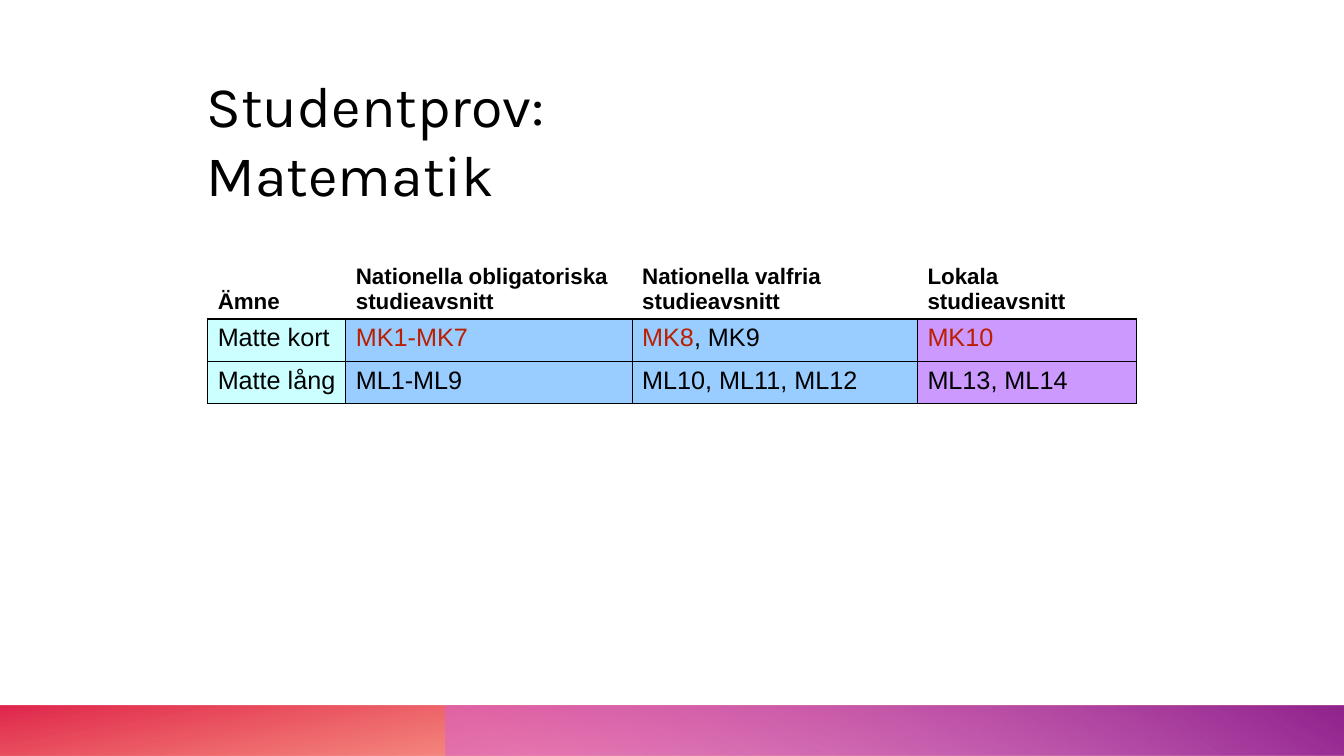
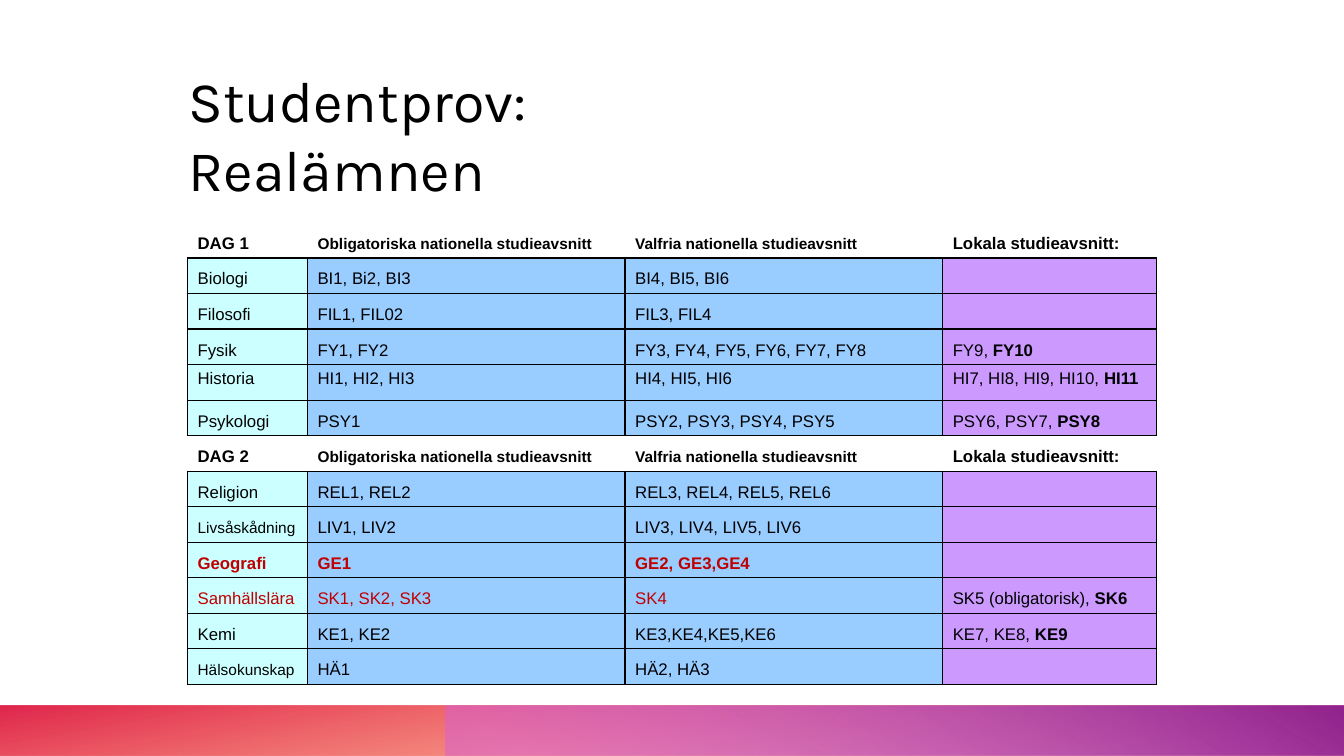
from dataclasses import dataclass

from lxml import etree
from pptx import Presentation
from pptx.dml.color import RGBColor
from pptx.enum.shapes import MSO_SHAPE
from pptx.enum.text import MSO_ANCHOR, MSO_AUTO_SIZE, PP_ALIGN
from pptx.oxml.ns import qn
from pptx.util import Inches, Pt

RECTANGLE = MSO_SHAPE.RECTANGLE
TOP, MIDDLE, BOTTOM = MSO_ANCHOR.TOP, MSO_ANCHOR.MIDDLE, MSO_ANCHOR.BOTTOM
LEFT = PP_ALIGN.LEFT
NO_AUTOFIT = MSO_AUTO_SIZE.NONE
TITLE_ONLY = 5
PLAIN_TABLE_STYLE = "{2D5ABB26-0587-4C30-8999-92F81FD0307C}"


@dataclass(frozen=True)
class Theme:
    title_font: str = "Karla"
    table_font: str = "Arial"
    title_size: int = 41
    math_header_size: int = 16
    math_size: int = 18
    subjects_size: int = 12
    small_size: int = 11
    border_width: int = 1
    text: str = "000000"
    math_accent: str = "B91F00"
    subjects_accent: str = "C00000"
    subject_fill: str = "CCFFFF"
    national_fill: str = "99CCFF"
    local_fill: str = "CC99FF"
    # Gradient stops: position, colour, opacity in percent
    warm_band: tuple = ((14, "FE4A00", 28), (100, "DA002F", 85))
    purple_band: tuple = ((9, "D861D4", 55), (99, "92248E", 100))

    @property
    def column_fills(self):
        return (self.subject_fill, self.national_fill,
                self.national_fill, self.local_fill)


THEME = Theme()


@dataclass(frozen=True)
class Run:
    text: str
    size: int = THEME.subjects_size
    bold: bool = False
    color: str = THEME.text


@dataclass(frozen=True)
class Row:
    """One table row; every cell is a list of runs."""
    cells: list
    header: bool = False
    anchor: MSO_ANCHOR = BOTTOM


def styled_cells(*texts, **style):
    return [[Run(text, **style)] for text in texts]


def math_row(*cells):
    return Row([[Run(text, THEME.math_size, color=color) for text, color in cell]
                for cell in cells], anchor=TOP)


def day_header(day):
    names = styled_cells(day, "Lokala studieavsnitt:", bold=True)
    national = styled_cells("Obligatoriska nationella studieavsnitt",
                            "Valfria nationella studieavsnitt",
                            size=THEME.small_size, bold=True)
    return Row([names[0], *national, names[1]], header=True)


def subject_row(subject, required, optional, local="", newest="",
                subject_size=THEME.subjects_size, anchor=BOTTOM, **style):
    """The newest local module is set in bold after the other ones."""
    local_runs = [Run(local), Run(newest, bold=True)] if local else []
    return Row([[Run(subject, subject_size, **style)],
                *styled_cells(required, optional, **style), local_runs],
               anchor=anchor)


def add_run(paragraph, text, font_name, size, color, bold=False):
    run = paragraph.add_run()
    run.text = text
    run.font.name = font_name
    run.font.size = Pt(size)
    run.font.bold = bold
    run.font.color.rgb = RGBColor.from_string(color)


def add_band(slide, left, width, stops, clockwise_angle, rotation=0):
    band = slide.shapes.add_shape(RECTANGLE, Inches(left), Inches(7),
                                  Inches(width), Inches(0.5))
    band.shadow.inherit = False
    band.line.fill.background()
    band.rotation = rotation
    band.element.spPr.find(qn("a:xfrm")).set("flipH", "1")
    band.fill.gradient()
    band.fill.gradient_angle = 360 - clockwise_angle
    for stop, (position, color, _) in zip(band.fill.gradient_stops, stops):
        stop.position = position / 100
        stop.color.rgb = RGBColor.from_string(color)
    for color_node, (_, _, opacity) in zip(band.element.iter(qn("a:srgbClr")), stops):
        etree.SubElement(color_node, qn("a:alpha")).set("val", str(opacity * 1000))
    return band


def move_to_layout(layout, shapes):
    """Let every slide of the layout show the shapes."""
    for shape_id, shape in enumerate(shapes, start=101):
        shape.element.nvSpPr.cNvPr.set("id", str(shape_id))
        layout.shapes.element.append(shape.element)


def add_titled_slide(deck, left, top, lines):
    slide = deck.slides.add_slide(deck.slide_layouts[TITLE_ONLY])
    title = slide.shapes.title
    title.left, title.top = Inches(left), Inches(top)
    title.width, title.height = Inches(8.5), Inches(1.26)
    frame = title.text_frame
    frame.word_wrap = True
    frame.auto_size = NO_AUTOFIT
    frame.vertical_anchor = MIDDLE
    for index, line in enumerate(lines):
        paragraph = frame.add_paragraph() if index else frame.paragraphs[0]
        paragraph.alignment = LEFT
        add_run(paragraph, line, THEME.title_font, THEME.title_size, THEME.text)
    return slide


def set_borders(cell, visible_sides):
    properties = cell._tc.get_or_add_tcPr()
    for side in "LRTB":
        border = etree.SubElement(properties, qn(f"a:ln{side}"))
        if side in visible_sides:
            border.set("w", str(Pt(THEME.border_width)))
            fill = etree.SubElement(border, qn("a:solidFill"))
            etree.SubElement(fill, qn("a:srgbClr")).set("val", THEME.text)
        else:
            etree.SubElement(border, qn("a:noFill"))


def fill_cell(cell, runs, anchor):
    cell.vertical_anchor = anchor
    paragraph = cell.text_frame.paragraphs[0]
    for run in runs:
        add_run(paragraph, run.text, THEME.table_font, run.size, run.color, run.bold)
    if not runs:
        end = etree.SubElement(paragraph._p, qn("a:endParaRPr"))
        end.set("sz", str(THEME.subjects_size * 100))


def add_module_table(slide, left, top, column_widths, header_height, row_height, rows):
    heights = [header_height] + [row_height] * (len(rows) - 1)
    table = slide.shapes.add_table(
        len(rows), len(column_widths), Inches(left), Inches(top),
        Inches(sum(column_widths)), Inches(sum(heights))).table
    table.first_row = table.horz_banding = False
    table._tbl.tblPr.find(qn("a:tableStyleId")).text = PLAIN_TABLE_STYLE
    for column, width in zip(table.columns, column_widths):
        column.width = Inches(width)
    for index, (row, height) in enumerate(zip(rows, heights)):
        table.rows[index].height = Inches(height)
        header_sides = "TB" if index else "B"
        for column, (runs, fill) in enumerate(zip(row.cells, THEME.column_fills)):
            cell = table.cell(index, column)
            set_borders(cell, header_sides if row.header else "LRTB")
            if row.header:
                cell.fill.background()
            else:
                cell.fill.solid()
                cell.fill.fore_color.rgb = RGBColor.from_string(fill)
            fill_cell(cell, runs, row.anchor)


def add_math_slide(deck):
    slide = add_titled_slide(deck, 1.95, 0.75, ["Studentprov:", "Matematik"])
    black, red = THEME.text, THEME.math_accent
    header = styled_cells("Ämne", "Nationella obligatoriska studieavsnitt",
                          "Nationella valfria studieavsnitt", "Lokala studieavsnitt",
                          size=THEME.math_header_size, bold=True)
    rows = [
        Row(header, header=True),
        math_row([("Matte kort", black)], [("MK1-MK7", red)],
                 [("MK8", red), (", MK9", black)], [("MK10", red)]),
        math_row([("Matte lång", black)], [("ML1-ML9", black)],
                 [("ML10, ML11, ML12", black)], [("ML13, ML14", black)]),
    ]
    add_module_table(slide, 2.06, 2.57, [1.37, 2.84, 2.83, 2.17], 0.53, 0.42, rows)
    return slide


def add_subjects_slide(deck):
    slide = add_titled_slide(deck, 1.77, 0.7, ["Studentprov:", "Realämnen"])
    red, small = THEME.subjects_accent, THEME.small_size
    rows = [
        day_header("DAG 1"),
        subject_row("Biologi", "BI1, Bi2, BI3", "BI4, BI5, BI6"),
        subject_row("Filosofi", "FIL1, FIL02", "FIL3, FIL4"),
        subject_row("Fysik", "FY1, FY2", "FY3, FY4, FY5, FY6, FY7, FY8", "FY9, ", "FY10"),
        subject_row("Historia", "HI1, HI2, HI3", "HI4, HI5, HI6",
                    "HI7, HI8, HI9, HI10, ", "HI11", anchor=TOP),
        subject_row("Psykologi", "PSY1", "PSY2, PSY3, PSY4, PSY5", "PSY6, PSY7, ", "PSY8"),
        day_header("DAG 2"),
        subject_row("Religion", "REL1, REL2", "REL3, REL4, REL5, REL6"),
        subject_row("Livsåskådning", "LIV1, LIV2", "LIV3, LIV4, LIV5, LIV6",
                    subject_size=small),
        subject_row("Geografi", "GE1", "GE2, GE3,GE4", color=red, bold=True),
        subject_row("Samhällslära", "SK1, SK2, SK3", "SK4",
                    "SK5 (obligatorisk), ", "SK6", color=red),
        subject_row("Kemi", "KE1, KE2", "KE3,KE4,KE5,KE6", "KE7, KE8, ", "KE9"),
        subject_row("Hälsokunskap", "HÄ1", "HÄ2, HÄ3", subject_size=small),
    ]
    table_height, header_height = 4.7, 0.47
    row_height = (table_height - header_height) / (len(rows) - 1)
    add_module_table(slide, 1.86, 2.09, [1.19, 3.15, 3.15, 2.12],
                     header_height, row_height, rows)


def main():
    deck = Presentation()
    deck.slide_width, deck.slide_height = Inches(13.33), Inches(7.5)
    math_slide = add_math_slide(deck)
    bands = [add_band(math_slide, 0, 13.33, THEME.warm_band, 100, rotation=180),
             add_band(math_slide, 4.42, 8.92, THEME.purple_band, 240)]
    move_to_layout(math_slide.slide_layout, bands)
    add_subjects_slide(deck)
    deck.save("out.pptx")


if __name__ == "__main__":
    main()
